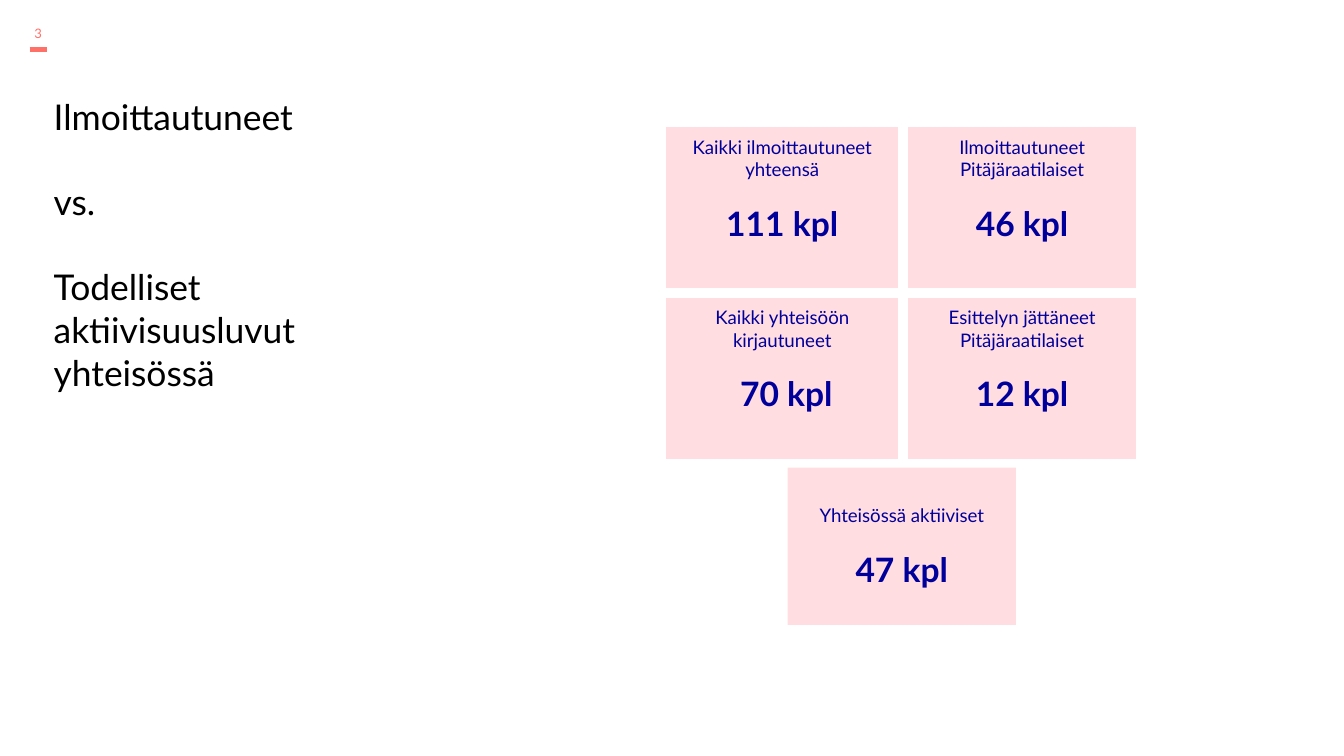
from lxml.etree import SubElement
from pptx import Presentation
from pptx.dml.color import RGBColor
from pptx.enum.shapes import MSO_CONNECTOR, MSO_SHAPE
from pptx.enum.text import MSO_ANCHOR, PP_ALIGN
from pptx.oxml.ns import qn
from pptx.util import Inches, Pt

FONT = "Lato"
CORAL, PINK, NAVY, BLACK, WHITE = "FF7068", "FFDDE0", "00009B", "000000", "FFFFFF"

PAGE_NUMBER = "3"
HEADING = ["Ilmoittautuneet", "vs.", "Todelliset aktiivisuusluvut yhteisössä"]
COUNTS = [
    [("Kaikki ilmoittautuneet yhteensä", "111 kpl"),
     ("Ilmoittautuneet Pitäjäraatilaiset", "46 kpl")],
    [("Kaikki yhteisöön kirjautuneet", " 70 kpl"),
     ("Esittelyn jättäneet Pitäjäraatilaiset", "12 kpl")],
]
ACTIVE = ("Yhteisössä aktiiviset", "47 kpl")
COLUMN_WIDTHS = [1.8, 1.77]
ROW_HEIGHT = 1.27


def rgb(color):
    return RGBColor.from_string(color)


def write(frame, lines, color, align, gap=0):
    """Write (text, size, bold) lines, with gap points between paragraphs."""
    frame.word_wrap = True
    for i, (text, size, bold) in enumerate(lines):
        paragraph = frame.paragraphs[0] if i == 0 else frame.add_paragraph()
        paragraph.alignment = align
        if i:
            paragraph.space_before = Pt(gap)
        run = paragraph.add_run()
        run.text = text
        run.font.name = FONT
        run.font.size = Pt(size)
        run.font.bold = bold
        run.font.color.rgb = rgb(color)


def set_margins(holder, inches):
    holder.margin_left = holder.margin_right = Inches(inches)
    holder.margin_top = holder.margin_bottom = Inches(inches)


def add_text(slide, box, lines, color, align, gap=0):
    frame = slide.shapes.add_textbox(*map(Inches, box)).text_frame
    set_margins(frame, 0)
    write(frame, lines, color, align, gap)


def write_count(frame, count):
    label, amount = count
    write(frame, [(label, 10, False), (amount, 18, True)], NAVY, PP_ALIGN.CENTER, gap=12)


def add_borders(cell, color, width):
    properties = cell._tc.get_or_add_tcPr()
    for position, side in enumerate(("lnL", "lnR", "lnT", "lnB")):
        line = SubElement(properties, qn(f"a:{side}"), w=str(Pt(width)))
        fill = SubElement(line, qn("a:solidFill"))
        SubElement(fill, qn("a:srgbClr"), val=color)
        properties.insert(position, line)


def add_page_mark(slide):
    mark = slide.shapes.add_connector(
        MSO_CONNECTOR.STRAIGHT, *map(Inches, (0.22, 0.37, 0.35, 0.37)))
    mark.line.color.rgb = rgb(CORAL)
    mark.line.width = Pt(3)
    SubElement(mark._element.spPr, qn("a:effectLst"))
    add_text(slide, (0.22, 0.19, 0.13, 0.18), [(PAGE_NUMBER, 7, False)],
             CORAL, PP_ALIGN.CENTER)


def add_count_table(slide):
    table = slide.shapes.add_table(
        len(COUNTS), len(COLUMN_WIDTHS), Inches(4.92), Inches(0.91),
        Inches(sum(COLUMN_WIDTHS)), Inches(ROW_HEIGHT * len(COUNTS))).table
    table.first_row = table.horz_banding = False
    for column, width in zip(table.columns, COLUMN_WIDTHS):
        column.width = Inches(width)
    for r, counts in enumerate(COUNTS):
        table.rows[r].height = Inches(ROW_HEIGHT)
        for c, count in enumerate(counts):
            cell = table.cell(r, c)
            set_margins(cell, 0.1)
            cell.fill.solid()
            cell.fill.fore_color.rgb = rgb(PINK)
            add_borders(cell, WHITE, 6)
            write_count(cell.text_frame, count)


def add_active_card(slide):
    card = slide.shapes.add_shape(
        MSO_SHAPE.RECTANGLE, *map(Inches, (5.86, 3.48, 1.7, 1.17)))
    card.shadow.inherit = False
    card.fill.solid()
    card.fill.fore_color.rgb = rgb(PINK)
    card.line.fill.background()
    set_margins(card.text_frame, 0.1)
    card.text_frame.vertical_anchor = MSO_ANCHOR.MIDDLE
    write_count(card.text_frame, ACTIVE)


def main():
    deck = Presentation()
    deck.slide_width = Inches(10)
    deck.slide_height = deck.slide_width * 9 // 16
    slide = deck.slides.add_slide(deck.slide_layouts[6])
    add_page_mark(slide)
    add_text(slide, (0.4, 0.71, 2.3, 3.97), [(text, 19, False) for text in HEADING],
             BLACK, PP_ALIGN.LEFT, gap=22.8)
    add_count_table(slide)
    add_active_card(slide)
    deck.save("out.pptx")


if __name__ == "__main__":
    main()
